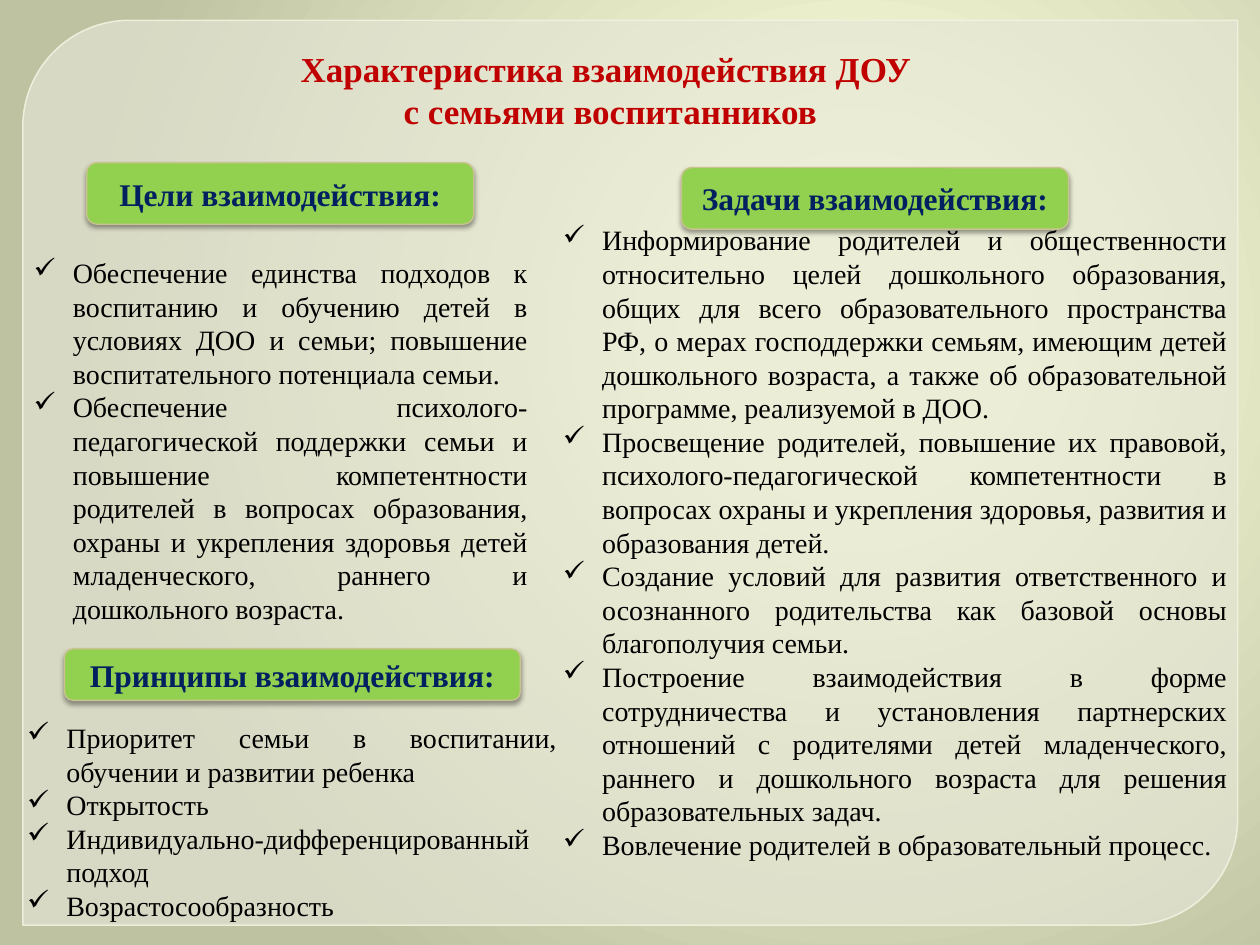
from dataclasses import dataclass

from lxml.etree import SubElement
from pptx import Presentation
from pptx.dml.color import RGBColor
from pptx.enum.shapes import MSO_SHAPE
from pptx.enum.text import MSO_ANCHOR, MSO_AUTO_SIZE, PP_ALIGN
from pptx.oxml import parse_xml
from pptx.oxml.ns import nsdecls, qn
from pptx.util import Cm, Pt


@dataclass(frozen=True)
class Theme:
    """Colours, font and type sizes of the slide."""
    font: str = "Times New Roman"
    title: str = "C00000"
    head: str = "002060"
    body: str = "000000"
    panel: str = "E5E6D7"
    edge: str = "F2F4E2"
    button: str = "92D050"
    rim: str = "CBC292"
    shade: str = "000000"
    glow: tuple = ((0, "FBFED9"), (20, "F9FCD8"), (100, "BFC2A1"))
    title_size: int = 20
    head_size: int = 18
    body_size: int = 16


THEME = Theme()

TITLE = ["Характеристика взаимодействия ДОУ ", "с семьями воспитанников"]

HEADS = [
    ("Цели взаимодействия:", (1.75, 3.28, 7.8, 1.24)),
    ("Задачи взаимодействия:", (13.74, 3.38, 7.8, 1.24)),
    ("Принципы взаимодействия:", (1.3, 13.08, 9.19, 1.04)),
]

LISTS = [
    ((0.3, 14.4, 11.18, 4.37), [
        "Приоритет семьи в воспитании, обучении и развитии ребенка",
        "Открытость",
        "Индивидуально-дифференцированный подход",
        "Возрастосообразность",
    ]),
    ((0.43, 5.03, 10.46, 7.77), [
        "Обеспечение единства подходов к воспитанию и обучению детей в условиях "
        "ДОО и семьи; повышение воспитательного потенциала семьи.",
        "Обеспечение психолого-педагогической поддержки семьи и повышение "
        "компетентности родителей в вопросах образования, охраны и укрепления "
        "здоровья детей младенческого, раннего и дошкольного возраста.",
    ]),
    ((11.1, 4.37, 13.89, 13.26), [
        "Информирование родителей и общественности относительно целей "
        "дошкольного образования, общих для всего образовательного пространства "
        "РФ, о мерах господдержки семьям, имеющим детей дошкольного возраста, "
        "а также об образовательной программе, реализуемой в ДОО.",
        "Просвещение родителей, повышение их правовой, психолого-педагогической "
        "компетентности в вопросах охраны и укрепления здоровья, развития и "
        "образования детей.",
        "Создание условий для развития ответственного и осознанного "
        "родительства как базовой основы благополучия семьи.",
        "Построение взаимодействия в форме сотрудничества и установления "
        "партнерских отношений с родителями детей младенческого, раннего и "
        "дошкольного возраста для решения образовательных задач.",
        "Вовлечение родителей в образовательный процесс.",
    ]),
]


def place(box):
    """Turn a box in centimetres into lengths."""
    return [Cm(side) for side in box]


def paint(slide):
    """Fill the background with a round glow."""
    fill = slide.background.fill
    fill.solid()
    old = next(slide.element.iter(qn("a:solidFill")))
    stops = "".join(
        f'<a:gs pos="{spot * 1000}"><a:srgbClr val="{tone}"/></a:gs>'
        for spot, tone in THEME.glow)
    glow = parse_xml(
        f'<a:gradFill {nsdecls("a")} rotWithShape="1"><a:gsLst>{stops}</a:gsLst>'
        '<a:path path="circle"><a:fillToRect l="68000" t="35000" r="32000" '
        'b="65000"/></a:path></a:gradFill>')
    old.getparent().replace(old, glow)


def fade(tone, share):
    """Set the opacity of a colour element in percent."""
    SubElement(tone, qn("a:alpha"), val=str(share * 1000))


def shape(slide, kind, box, fill, line, width):
    """Add a flat shape with a fill and an outline."""
    form = slide.shapes.add_shape(kind, *place(box))
    form.shadow.inherit = False
    form.fill.solid()
    form.fill.fore_color.rgb = RGBColor.from_string(fill)
    form.line.color.rgb = RGBColor.from_string(line)
    form.line.width = Pt(width)
    return form


def panel(slide):
    """Add the pale panel with two round corners."""
    form = shape(slide, MSO_SHAPE.ROUND_2_DIAG_RECTANGLE,
                 (0.46, 0.41, 24.49, 18.24), THEME.panel, THEME.edge, 0.87)
    form.adjustments[0] = 0.118
    form.adjustments[1] = 0
    for tone, share in zip(form.element.spPr.iter(qn("a:srgbClr")), (65, 88)):
        fade(tone, share)


def write(frame, lines, *, size, color, bold=False, align=PP_ALIGN.CENTER,
          mark=None):
    """Write lines as paragraphs in one format."""
    frame.word_wrap = True
    for rank, line in enumerate(lines):
        para = frame.add_paragraph() if rank else frame.paragraphs[0]
        para.alignment = align
        run = para.add_run()
        run.text = line
        run.font.name = THEME.font
        run.font.size = Pt(size)
        run.font.bold = bold
        run.font.color.rgb = RGBColor.from_string(color)
        if mark:
            props = para._p.get_or_add_pPr()
            props.set("marL", str(Cm(0.79)))
            props.set("indent", str(-Cm(0.79)))
            SubElement(props, qn("a:buChar"), char=mark)


def button(slide, text, box):
    """Add a green heading with a soft shadow."""
    form = shape(slide, MSO_SHAPE.ROUNDED_RECTANGLE, box,
                 THEME.button, THEME.rim, 0.75)
    glow = form.element.spPr.find(qn("a:effectLst"))
    cast = SubElement(glow, qn("a:outerShdw"), blurRad=str(Pt(3.1)),
                      dist=str(Pt(1.6)), dir="5400000", rotWithShape="0")
    fade(SubElement(cast, qn("a:srgbClr"), val=THEME.shade), 38)
    form.text_frame.vertical_anchor = MSO_ANCHOR.MIDDLE
    write(form.text_frame, [text], size=THEME.head_size, color=THEME.head,
          bold=True)


def label(slide, lines, box, **style):
    """Add a text box that grows with its lines."""
    frame = slide.shapes.add_textbox(*place(box)).text_frame
    frame.auto_size = MSO_AUTO_SIZE.SHAPE_TO_FIT_TEXT
    write(frame, lines, **style)


def main():
    """Build and save the slide."""
    deck = Presentation()
    deck.slide_width, deck.slide_height = Cm(25.4), Cm(19.05)
    slide = deck.slides.add_slide(deck.slide_layouts[6])
    paint(slide)
    panel(slide)
    label(slide, TITLE, (2.31, 0.84, 19.99, 1.96), size=THEME.title_size,
          color=THEME.title, bold=True)
    for text, box in HEADS:
        button(slide, text, box)
    for box, lines in LISTS:
        label(slide, lines, box, size=THEME.body_size, color=THEME.body,
              align=PP_ALIGN.JUSTIFY, mark="✓")
    deck.save("out.pptx")


if __name__ == "__main__":
    main()
